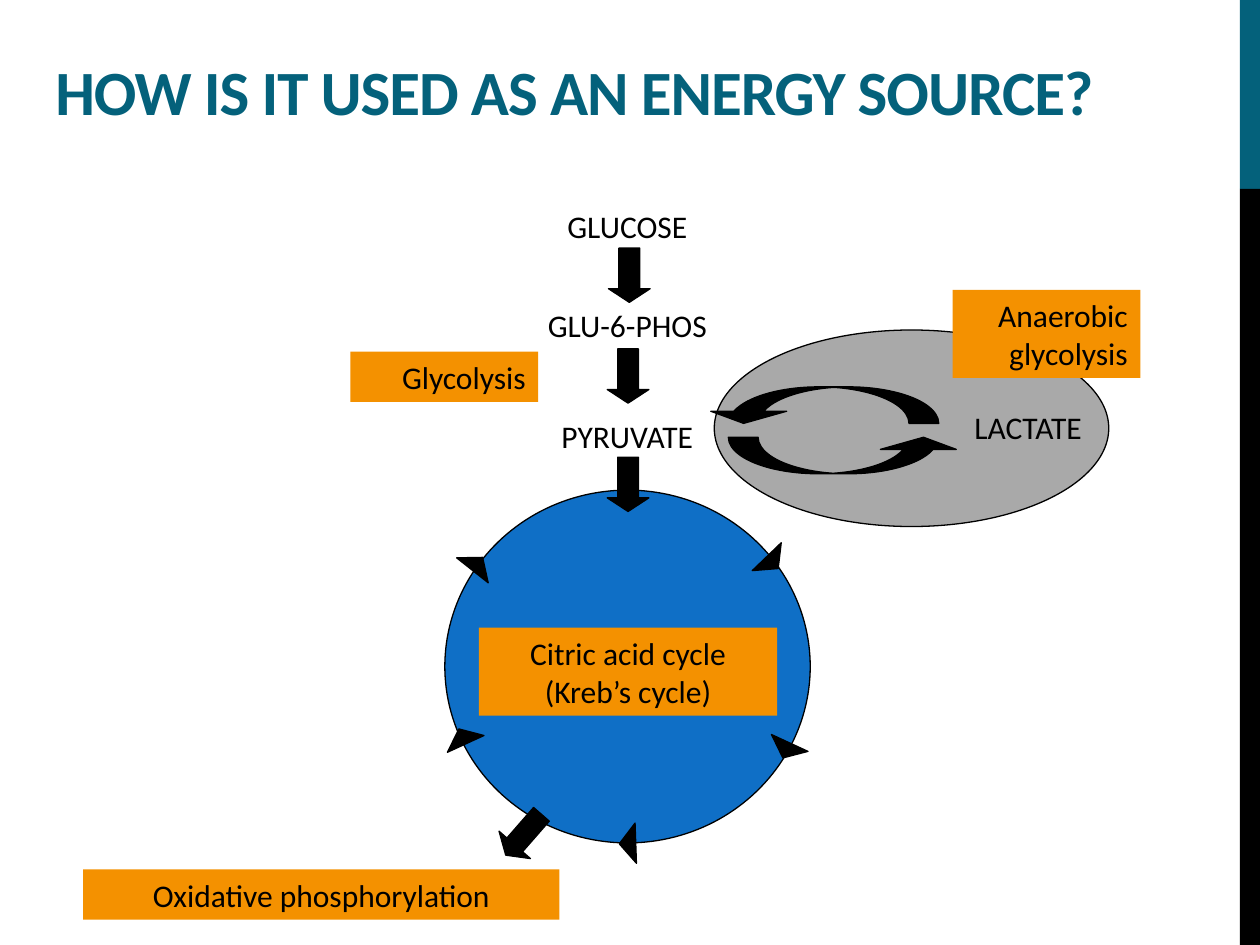
from dataclasses import dataclass

from pptx import Presentation
from pptx.dml.color import RGBColor
from pptx.enum.shapes import MSO_SHAPE as SHAPE
from pptx.enum.text import MSO_ANCHOR as ANCHOR, PP_ALIGN as ALIGN
from pptx.util import Pt


@dataclass(frozen=True)
class Theme:
    font: str = "Calibri"
    title_size: float = 36
    body_size: float = 18
    outline: float = 0.75
    teal: str = "04617B"
    black: str = "000000"
    blue: str = "0F6FC6"
    orange: str = "F49100"
    grey: str = "A9A9A9"


THEME = Theme()


def rgb(value):
    return RGBColor.from_string(value)


def write(sp, text, align=ALIGN.CENTER, anchor=ANCHOR.TOP,
          size=THEME.body_size, color=THEME.black, bold=False):
    tf = sp.text_frame
    tf.word_wrap = True
    tf.vertical_anchor = anchor
    p = tf.paragraphs[0]
    p.text = text
    p.alignment = align
    for r in p.runs:
        r.font.name = THEME.font
        r.font.size = Pt(size)
        r.font.bold = bold
        r.font.color.rgb = rgb(color)
    return p


def add_shape(s, kind, box, fill, outlined=True, rotation=0, adjust=()):
    sp = s.shapes.add_shape(kind, *map(Pt, box))
    sp.shadow.inherit = False
    sp.fill.solid()
    sp.fill.fore_color.rgb = rgb(fill)
    if outlined:
        sp.line.color.rgb = rgb(THEME.black)
        sp.line.width = Pt(THEME.outline)
    else:
        sp.line.fill.background()
    sp.rotation = rotation
    for i, value in enumerate(adjust):
        sp.adjustments[i] = value
    return sp


def add_title(s, text):
    sp = s.shapes.add_textbox(Pt(24.5), Pt(-13), Pt(694), Pt(90))
    p = write(sp, text, ALIGN.LEFT, ANCHOR.BOTTOM,
              THEME.title_size, THEME.teal, bold=True)
    for r in p.runs:
        r.font._element.set("spc", "-60")


def add_label(s, text, left, top):
    sp = s.shapes.add_textbox(Pt(left), Pt(top), Pt(141), Pt(28.8))
    write(sp, text)


def add_tag(s, text, box, align=ALIGN.CENTER):
    sp = add_shape(s, SHAPE.RECTANGLE, box, THEME.orange, outlined=False)
    write(sp, text, align)


def add_marker(s, kind, center, size, rotation, adjust):
    (x, y), (w, h) = center, size
    add_shape(s, kind, (x - w / 2, y - h / 2, w, h), THEME.black,
              rotation=rotation, adjust=adjust)


def add_arrow(s, x, y, rotation=90):
    add_marker(s, SHAPE.RIGHT_ARROW, (x, y), (31, 23.8), rotation, (0.5, 0.327))


def add_cycle_head(s, x, y, rotation):
    add_marker(s, SHAPE.ISOSCELES_TRIANGLE, (x, y), (23, 9.4), rotation, (0.5,))


def add_curved_arrow(s, x, y, rotation=0):
    add_marker(s, SHAPE.CURVED_UP_ARROW, (x, y), (133.2, 20.9), rotation,
               (0.814, 2.077, 0.333))


def main():
    prs = Presentation()
    prs.slide_width, prs.slide_height = Pt(720), Pt(540)
    s = prs.slides.add_slide(prs.slide_layouts[6])

    # Side bar and title
    for top, height, fill in ((0, 108, THEME.teal), (108, 432, THEME.black)):
        add_shape(s, SHAPE.RECTANGLE, (708.5, top, 11.5, height), fill,
                  outlined=False)
    add_title(s, "HOW IS IT USED AS AN ENERGY SOURCE?")

    # Glucose to pyruvate
    for text, top in (("GLUCOSE", 114.5), ("GLU-6-PHOS", 171.6),
                      ("PYRUVATE", 234.7)):
        add_label(s, text, 288, top)
    add_arrow(s, 359.6, 157.3)
    add_arrow(s, 358.9, 214.9)

    # Citric acid cycle
    add_shape(s, SHAPE.OVAL, (254.2, 280.1, 208.8, 201.6), THEME.blue)
    add_arrow(s, 358.9, 276.8)
    for x, y, rotation in ((441.4, 321.5, 136.1), (264.2, 420.8, 335.4),
                           (272.9, 322.2, 38.4), (449.3, 428.8, 204.8),
                           (358.6, 482, 268)):
        add_cycle_head(s, x, y, rotation)
    add_tag(s, "Citric acid cycle\v(Kreb’s cycle)", (273.6, 358.6, 170.6, 50.4))

    # Oxidative phosphorylation
    add_arrow(s, 299.2, 477, 131.1)
    add_tag(s, "Oxidative phosphorylation", (47.5, 496.8, 272.2, 28.8))

    # Anaerobic branch
    add_shape(s, SHAPE.OVAL, (408.2, 188.6, 225.4, 112.3), THEME.grey)
    add_curved_arrow(s, 482.8, 260.3)
    add_curved_arrow(s, 469.8, 231.5, 180)
    add_tag(s, "Anaerobic\vglycolysis", (544.3, 165.6, 107.3, 50.4), ALIGN.RIGHT)
    add_label(s, "LACTATE", 517, 229.7)

    # Glycolysis
    add_tag(s, "Glycolysis", (200.2, 200.9, 107.3, 28.8), ALIGN.RIGHT)

    prs.save("out.pptx")


if __name__ == "__main__":
    main()
